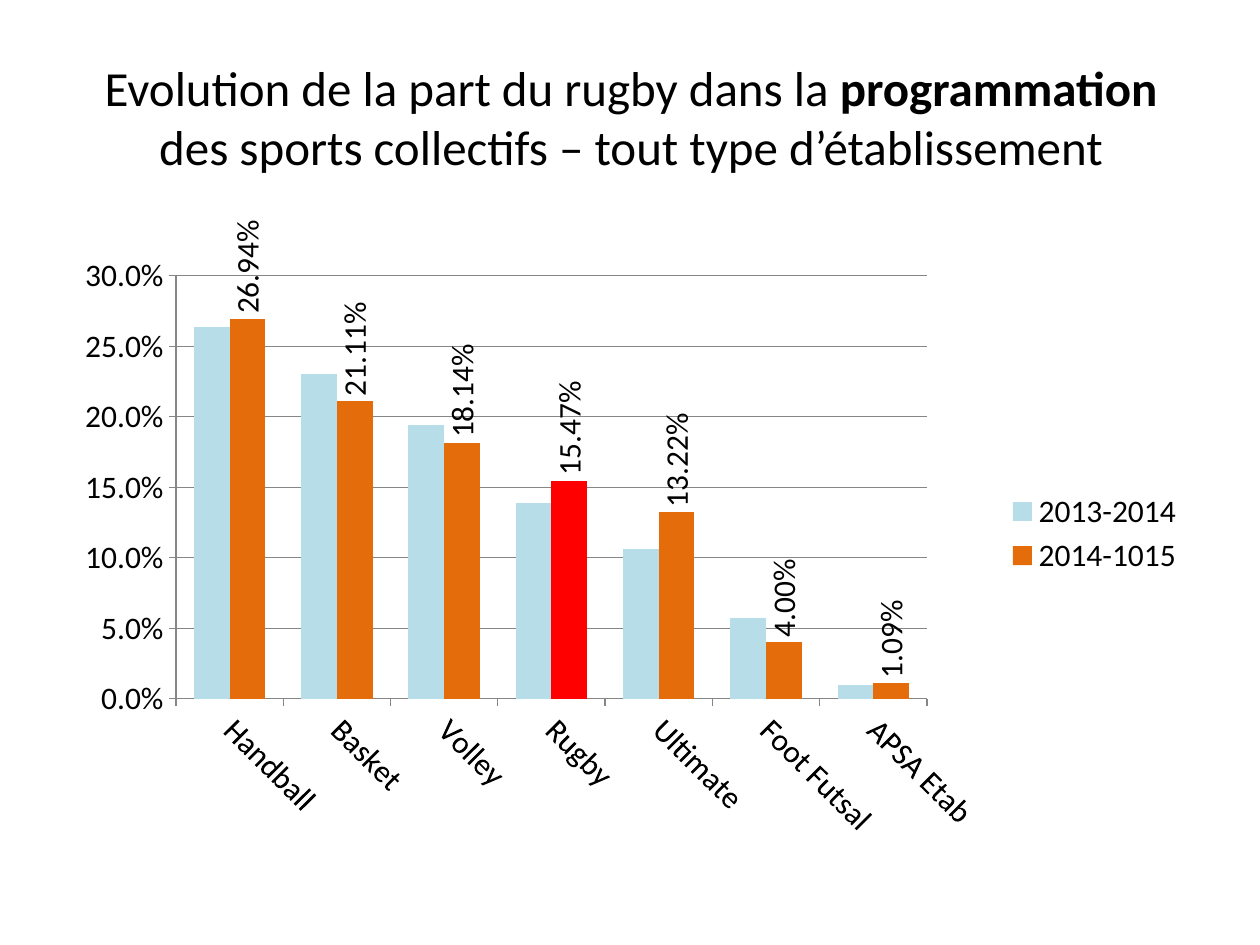
from lxml import etree
from pptx import Presentation
from pptx.chart.data import CategoryChartData
from pptx.dml.color import RGBColor
from pptx.enum.chart import XL_CHART_TYPE, XL_LABEL_POSITION, XL_LEGEND_POSITION, XL_TICK_MARK
from pptx.enum.text import MSO_ANCHOR, PP_ALIGN
from pptx.oxml.ns import qn
from pptx.util import Pt

COLUMN = XL_CHART_TYPE.COLUMN_CLUSTERED
OUT_END = XL_LABEL_POSITION.OUTSIDE_END
RIGHT = XL_LEGEND_POSITION.RIGHT
OUT = XL_TICK_MARK.OUTSIDE
MIDDLE = MSO_ANCHOR.MIDDLE
CENTER = PP_ALIGN.CENTER

SCALE = 914400 / 126
BLACK = RGBColor(0x00, 0x00, 0x00)
GREY = RGBColor(0x86, 0x86, 0x86)
BLUE = RGBColor(0xB7, 0xDE, 0xE8)
ORANGE = RGBColor(0xE4, 0x6C, 0x0A)
RED = RGBColor(0xFF, 0x00, 0x00)

TITLE = [
    ("Evolution de la part du rugby dans la ", False),
    ("programmation", True),
    (" des sports collectifs – tout type d’établissement", False),
]
SPORTS = ["Handball", "Basket", "Volley", "Rugby", "Ultimate", "Foot Futsal", "APSA Etab"]
YEARS = [
    ("2013-2014", BLUE, [0.264, 0.23, 0.194, 0.139, 0.106, 0.057, 0.01]),
    ("2014-1015", ORANGE, [0.2694, 0.2111, 0.1814, 0.1547, 0.1322, 0.04, 0.0109]),
]


def px(n):
    return round(n * SCALE)


def style(font, size=18, bold=False, color=BLACK, name="Calibri"):
    font.size, font.bold, font.name = Pt(size), bold, name
    font.color.rgb = color


def write(para, text, **kw):
    run = para.add_run()
    run.text = text
    style(run.font, **kw)


def turn(owner, deg):
    """Rotate the text of an axis or of data labels."""
    body = owner._element.find(qn("c:txPr")).find(qn("a:bodyPr"))
    body.set("rot", str(deg * 60000))
    body.set("vert", "horz")


def place(plot, box, area):
    """Fix the inner plot area, both boxes in px."""
    left, top, wide, high = box
    x, y, w, h = area
    root = plot._element.getparent()
    old = root.find(qn("c:layout"))
    if old is not None:
        root.remove(old)
    node = etree.Element(qn("c:layout"))
    root.insert(0, node)
    man = etree.SubElement(node, qn("c:manualLayout"))
    parts = [("layoutTarget", "inner"), ("xMode", "edge"), ("yMode", "edge"),
             ("x", (x - left) / wide), ("y", (y - top) / high),
             ("w", w / wide), ("h", h / high)]
    for tag, val in parts:
        etree.SubElement(man, qn("c:" + tag)).set("val", str(val))


class Deck:
    def __init__(self, wide, high):
        self.prs = Presentation()
        self.prs.slide_width, self.prs.slide_height = px(wide), px(high)
        self.slide = self.prs.slides.add_slide(self.prs.slide_layouts[6])

    def title(self, box, runs, size):
        frame = self.slide.shapes.add_textbox(*map(px, box)).text_frame
        frame.word_wrap = True
        frame.vertical_anchor = MIDDLE
        para = frame.paragraphs[0]
        para.alignment = CENTER
        for text, bold in runs:
            write(para, text, size=size, bold=bold)

    def chart(self, box, area, cats, series):
        data = CategoryChartData(number_format="0.0%")
        data.categories = cats
        for name, _, vals in series:
            data.add_series(name, vals)
        chart = self.slide.shapes.add_chart(COLUMN, *map(px, box), data).chart
        style(chart.font)
        chart.has_title = False
        chart.has_legend = True
        chart.legend.position = RIGHT
        chart.legend.include_in_layout = False
        style(chart.legend.font)
        plot = chart.plots[0]
        plot.gap_width, plot.overlap = 100, 0
        plot.vary_by_categories = False
        place(plot, box, area)
        for bars, (_, color, _) in zip(plot.series, series):
            bars.invert_if_negative = False
            bars.format.fill.solid()
            bars.format.fill.fore_color.rgb = color
        self.axes(chart)
        return plot

    def axes(self, chart):
        for axis in (chart.category_axis, chart.value_axis):
            axis.major_tick_mark = OUT
            axis.format.line.color.rgb = GREY
            style(axis.tick_labels.font)
        turn(chart.category_axis, 45)
        axis = chart.value_axis
        axis.minimum_scale, axis.maximum_scale, axis.major_unit = 0, 0.3, 0.05
        axis.tick_labels.number_format = "0.0%"
        axis.tick_labels.number_format_is_linked = False
        axis.has_major_gridlines = True
        axis.major_gridlines.format.line.color.rgb = GREY

    def labels(self, bars):
        tags = bars.data_labels
        style(tags.font)
        tags.show_value = True
        tags.number_format = "0.00%"
        tags.number_format_is_linked = False
        tags.position = OUT_END
        turn(tags, -90)

    def mark(self, bars, index, color):
        fill = bars.points[index].format.fill
        fill.solid()
        fill.fore_color.rgb = color


def main():
    deck = Deck(1260, 945)
    deck.title((64, 37, 1134, 158), TITLE, 28)
    plot = deck.chart((63, 220, 1134, 624), (176, 273, 751, 425), SPORTS, YEARS)
    last = plot.series[1]
    deck.labels(last)
    deck.mark(last, SPORTS.index("Rugby"), RED)
    deck.prs.save("out.pptx")


if __name__ == "__main__":
    main()
